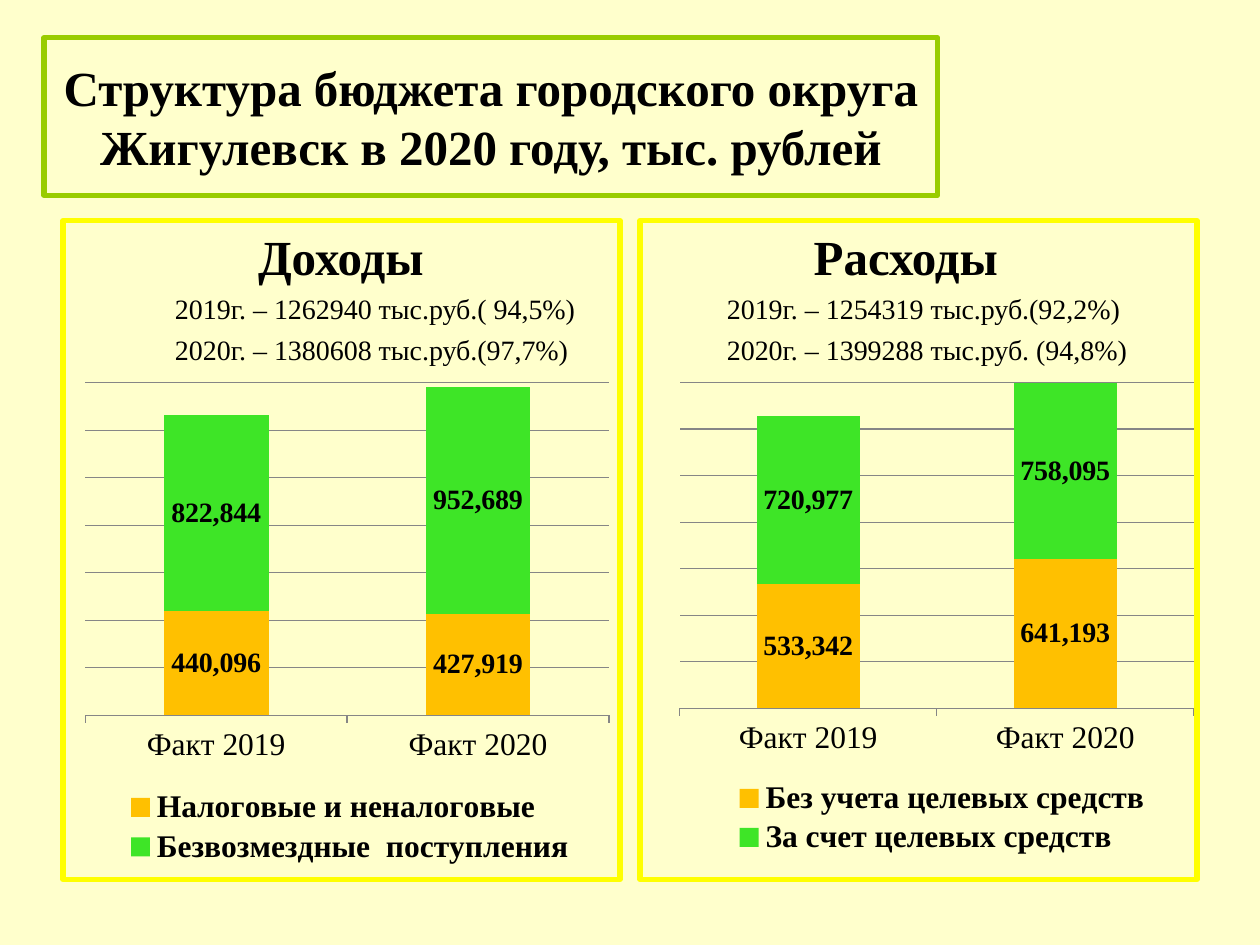
from pptx import Presentation
from pptx.chart.data import CategoryChartData
from pptx.dml.color import RGBColor
from pptx.enum.chart import XL_CHART_TYPE as ChartType, XL_LABEL_POSITION as LabelPosition
from pptx.enum.chart import XL_LEGEND_POSITION as LegendPosition, XL_TICK_MARK as TickMark
from pptx.enum.shapes import MSO_SHAPE as Shape
from pptx.enum.text import MSO_ANCHOR as Anchor, PP_ALIGN as Align
from pptx.oxml import parse_xml
from pptx.oxml.ns import nsdecls
from pptx.util import Inches, Pt

CREAM = RGBColor(0xFF, 0xFF, 0xCC)
OLIVE = RGBColor(0x99, 0xCC, 0x00)
YELLOW = RGBColor(0xFF, 0xFF, 0x00)
AMBER = RGBColor(0xFF, 0xC0, 0x00)
GREEN = RGBColor(0x3E, 0xE5, 0x27)
GRAY = RGBColor(0x86, 0x86, 0x86)
BLACK = RGBColor(0, 0, 0)
FONT = "Times New Roman"
YEARS = ["Факт 2019", "Факт 2020"]


def set_font(font, size, bold=False):
    font.name, font.size, font.bold = FONT, Pt(size), bold
    font.color.rgb = BLACK


def write(paragraph, text, size=16, bold=False, align=Align.LEFT, indent=0, before=0):
    paragraph.alignment = align
    paragraph.space_before = Pt(before)
    paragraph._p.get_or_add_pPr().set("marL", str(Inches(indent)))
    run = paragraph.add_run()
    run.text = text
    set_font(run.font, size, bold)


def place(element, inner, x, y, width, height):
    """Give a plot area or legend a place, in fractions of the chart."""
    for old in element.findall(inner.tag):
        element.remove(old)
    target = '<c:layoutTarget val="inner"/>' if element.tag.endswith("plotArea") else ""
    return parse_xml(
        f'<c:layout {nsdecls("c")}><c:manualLayout>{target}'
        '<c:xMode val="edge"/><c:yMode val="edge"/>'
        f'<c:x val="{x}"/><c:y val="{y}"/><c:w val="{width}"/><c:h val="{height}"/>'
        '</c:manualLayout></c:layout>')


def set_layout(element, after, *box):
    """Place a plot area or legend, in fractions of the chart."""
    layout = parse_xml(f'<c:layout {nsdecls("c")}/>')
    new_layout = place(element, layout, *box)
    if after is None:
        element.insert(0, new_layout)
    else:
        after.addnext(new_layout)


class BudgetSlide:
    def __init__(self, presentation):
        self.slide = presentation.slides.add_slide(presentation.slide_layouts[6])
        self.slide.background.fill.solid()
        self.slide.background.fill.fore_color.rgb = CREAM

    def frame(self, left, top, width, height, color, anchor=Anchor.TOP):
        shape = self.slide.shapes.add_shape(
            Shape.RECTANGLE, Inches(left), Inches(top), Inches(width), Inches(height))
        shape.shadow.inherit = False
        shape.fill.background()
        shape.line.color.rgb = color
        shape.line.width = Pt(3)
        shape.text_frame.word_wrap = True
        shape.text_frame.vertical_anchor = anchor
        return shape.text_frame

    def panel(self, left, heading, heading_indent, lines, line_indent):
        text_frame = self.frame(left, 1.75, 4.42, 5.23, YELLOW)
        write(text_frame.paragraphs[0], heading, size=28, bold=True, indent=heading_indent)
        for line in lines:
            write(text_frame.add_paragraph(), line, indent=line_indent, before=3.7)

    def chart(self, left, width, height, series_values, legend_box):
        data = CategoryChartData(number_format="#,##0")
        data.categories = YEARS
        for name, values in series_values.items():
            data.add_series(name, values)
        chart = self.slide.shapes.add_chart(
            ChartType.COLUMN_STACKED, Inches(left), Inches(2.96),
            Inches(width), Inches(height), data).chart
        set_font(chart.font, 18)
        chart.has_title = False

        # Axes
        value_axis = chart.value_axis
        value_axis.visible = False
        value_axis.minimum_scale, value_axis.maximum_scale = 0, 1400000
        value_axis.major_unit = 200000
        value_axis.has_major_gridlines = True
        category_axis = chart.category_axis
        category_axis.major_tick_mark = TickMark.OUTSIDE
        for line in (value_axis.major_gridlines.format.line, category_axis.format.line):
            line.color.rgb = GRAY
            line.width = Pt(0.75)

        # Columns and their labels
        plot = chart.plots[0]
        plot.gap_width, plot.overlap = 150, 100
        plot.vary_by_categories = False
        for series, color in zip(plot.series, (AMBER, GREEN)):
            series.format.fill.solid()
            series.format.fill.fore_color.rgb = color
            labels = series.data_labels
            labels.show_value = True
            labels.number_format, labels.number_format_is_linked = "#,##0", False
            labels.position = LabelPosition.CENTER
            set_font(labels.font, 16, bold=True)

        # Legend
        chart.has_legend = True
        legend = chart.legend
        legend.position = LegendPosition.BOTTOM
        legend.include_in_layout = False
        set_font(legend.font, 18, bold=True)
        set_layout(chart._chartSpace.chart.plotArea, None, 0.02, 0.02, 0.96, 0.67)
        set_layout(legend._element, legend._element.legendPos, *legend_box)


def main():
    presentation = Presentation()
    presentation.slide_width, presentation.slide_height = Inches(10), Inches(7.5)
    budget = BudgetSlide(presentation)

    # Title
    title = budget.frame(0.35, 0.3, 7.09, 1.25, OLIVE, Anchor.MIDDLE)
    write(title.paragraphs[0],
          "Структура бюджета городского округа Жигулевск в 2020 году, тыс. рублей",
          size=28, bold=True, align=Align.CENTER)

    # Income and expenses panels
    budget.panel(0.5, "Доходы", 1.45,
                 ["2019г. – 1262940 тыс.руб.( 94,5%)", "2020г. – 1380608 тыс.руб.(97,7%)"], 0.79)
    budget.panel(5.08, "Расходы", 1.28,
                 ["2019г. – 1254319 тыс.руб.(92,2%)", "2020г. – 1399288 тыс.руб. (94,8%)"], 0.59)

    # Charts
    budget.chart(0.59, 4.33, 3.94, {
        "Налоговые и неналоговые": (440096, 427919),
        "Безвозмездные  поступления": (822844, 952689),
    }, (0.09, 0.83, 0.83, 0.17))
    budget.chart(5.31, 4.25, 3.86, {
        "Без учета целевых средств": (533342, 641193),
        "За счет целевых средств": (720977, 758095),
    }, (0.11, 0.83, 0.8, 0.17))

    presentation.save("out.pptx")


if __name__ == "__main__":
    main()
